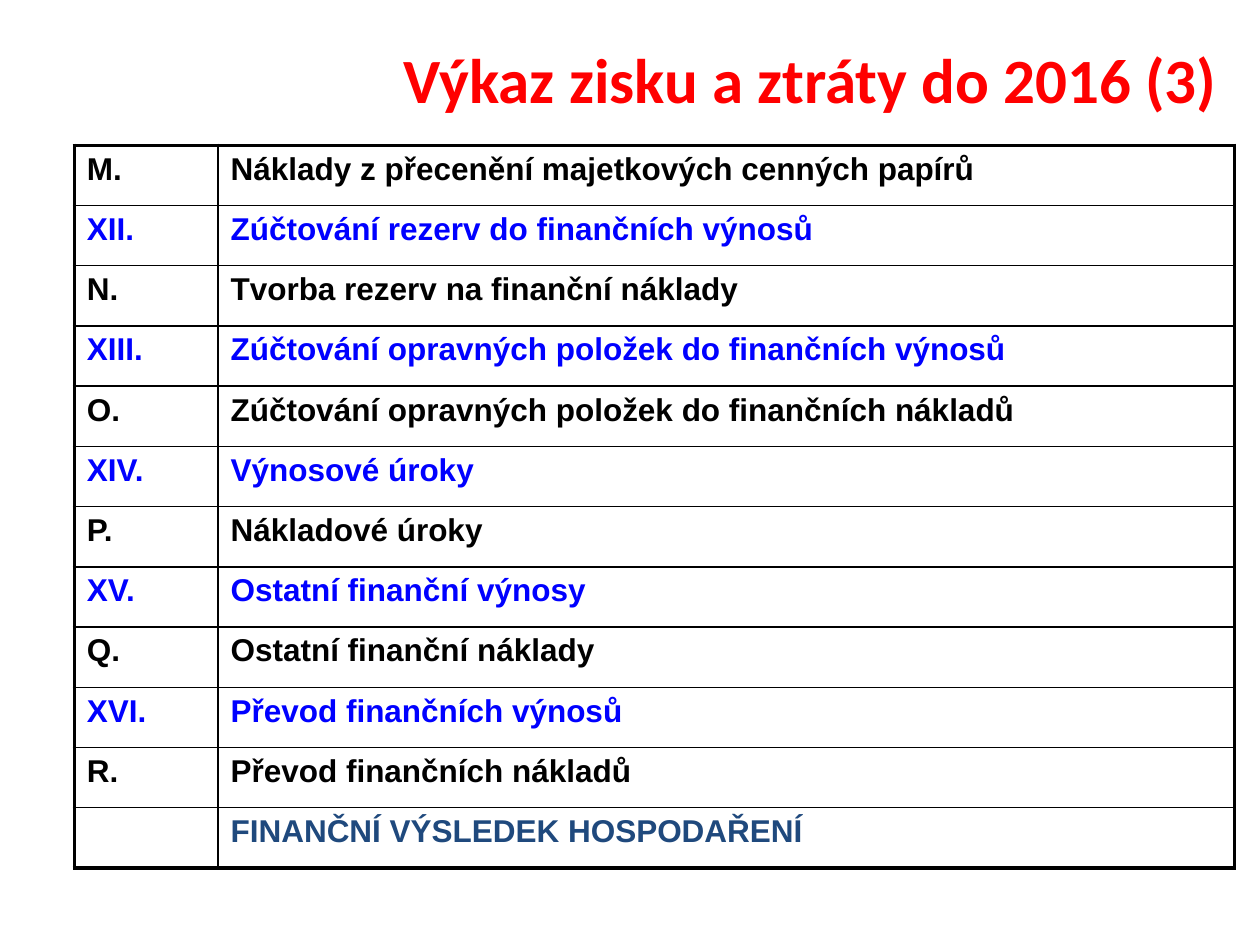
from pptx import Presentation
from pptx.dml.color import RGBColor
from pptx.enum.text import MSO_ANCHOR, PP_ALIGN
from pptx.oxml.ns import qn
from pptx.util import Pt
from lxml.etree import SubElement

BLACK = RGBColor(0, 0, 0)
BLUE = RGBColor(0, 0, 255)
NAVY = RGBColor(0x1F, 0x49, 0x7D)
RED = RGBColor(255, 0, 0)

TITLE = "Výkaz zisku a ztráty do 2016 (3)"
ROWS = [
    ("M.", "Náklady z přecenění majetkových cenných papírů", BLACK),
    ("XII.", "Zúčtování rezerv do finančních výnosů", BLUE),
    ("N.", "Tvorba rezerv na finanční náklady", BLACK),
    ("XIII.", "Zúčtování opravných položek do finančních výnosů", BLUE),
    ("O.", "Zúčtování opravných položek do finančních nákladů", BLACK),
    ("XIV.", "Výnosové úroky", BLUE),
    ("P.", "Nákladové úroky", BLACK),
    ("XV.", "Ostatní finanční výnosy", BLUE),
    ("Q.", "Ostatní finanční náklady", BLACK),
    ("XVI.", "Převod finančních výnosů", BLUE),
    ("R.", "Převod finančních nákladů", BLACK),
    ("", "FINANČNÍ VÝSLEDEK HOSPODAŘENÍ", NAVY),
]
COL_WIDTHS = (82.1, 581)
ROW_HEIGHT = 34.44
THIN, THICK = 1, 2.25


def add_run(p, text, font, size, color):
    r = p.add_run()
    r.text = text
    r.font.name = font
    r.font.size = Pt(size)
    r.font.bold = True
    r.font.color.rgb = color


def set_borders(cell, outer_edges):
    tcPr = cell._tc.get_or_add_tcPr()
    for side, outer in zip("LRTB", outer_edges):
        ln = SubElement(tcPr, qn(f"a:ln{side}"), w=str(Pt(THICK if outer else THIN)))
        fill = SubElement(ln, qn("a:solidFill"))
        SubElement(fill, qn("a:srgbClr"), val=str(BLACK))


prs = Presentation()
prs.slide_width, prs.slide_height = Pt(720), Pt(540)
s = prs.slides.add_slide(prs.slide_layouts[5])

title = s.shapes.title
title.left, title.top, title.width, title.height = Pt(139), Pt(0), Pt(648), Pt(90)
tf = title.text_frame
tf.vertical_anchor = MSO_ANCHOR.MIDDLE
p = tf.paragraphs[0]
p.alignment = PP_ALIGN.CENTER
add_run(p, TITLE, "Calibri", 36, RED)

table = s.shapes.add_table(
    len(ROWS), len(COL_WIDTHS), Pt(42.5), Pt(83),
    Pt(sum(COL_WIDTHS)), Pt(ROW_HEIGHT * len(ROWS))).table
table.first_row = table.horz_banding = False
for col, width in zip(table.columns, COL_WIDTHS):
    col.width = Pt(width)

last_row, last_col = len(ROWS) - 1, len(COL_WIDTHS) - 1
for i, (*texts, color) in enumerate(ROWS):
    table.rows[i].height = Pt(ROW_HEIGHT)
    for j, text in enumerate(texts):
        cell = table.cell(i, j)
        set_borders(cell, (j == 0, j == last_col, i == 0, i == last_row))
        cell.fill.background()
        if text:
            add_run(cell.text_frame.paragraphs[0], text, "Arial", 18, color)

prs.save("out.pptx")
